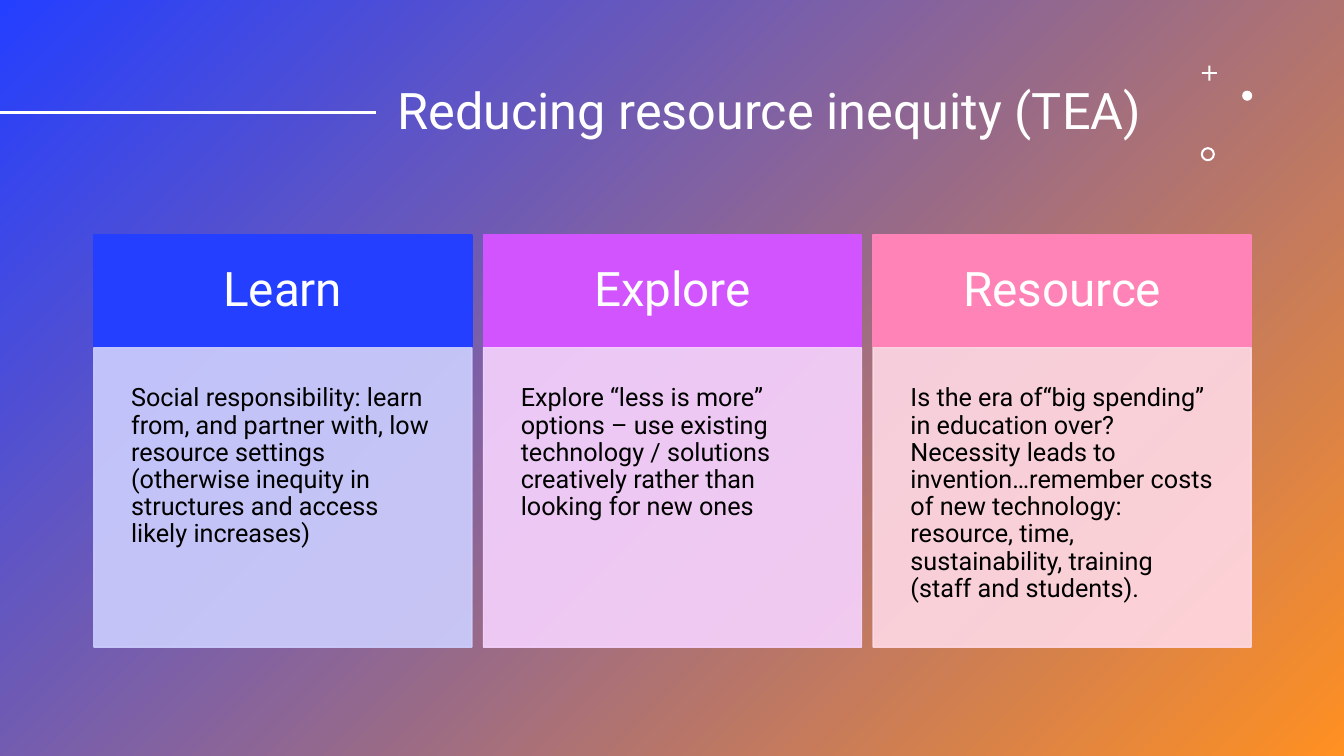
from pptx import Presentation, util as u
from pptx.dml.color import RGBColor
from pptx.enum import shapes, text
from pptx.oxml import ns, xmlchemy as xml

# Content
TITLE = "Reducing resource inequity (TEA)"
CARDS = [
    ("Learn", "blue", "pale blue",
     "Social responsibility: learn from, and partner with, low resource settings "
     "(otherwise inequity in structures and access likely increases)"),
    ("Explore", "violet", "pale violet",
     "Explore “less is more” options – use existing technology / solutions "
     "creatively rather than looking for new ones"),
    ("Resource", "pink", "pale pink",
     "Is the era of“big spending” in education over? Necessity leads to "
     "invention…remember costs of new technology: resource, time, "
     "sustainability, training (staff and students)."),
]
HEX = {
    "blue": "243FFF", "violet": "D154FF", "pink": "FF83B6",
    "pale blue": "CDCFFF", "pale violet": "F7D3FF", "pale pink": "FFD9E6",
    "orange": "FF9022", "white": "FFFFFF", "black": "000000",
}
FONT = "Roboto"
KIND = shapes.MSO_SHAPE
# Ornaments: shape, left, top, size, adjustment
MARKS = [
    (KIND.CROSS, 11.92, 0.65, 0.15, 0.44),
    (KIND.OVAL, 12.32, 0.9, 0.1, None),
    (KIND.DONUT, 11.91, 1.46, 0.14, 0.15),
]

# Grid
WIDE, HIGH = 13.33, 7.5
LEFT, TOP = 0.93, 2.33
CARD_W, GAP = 3.75, 0.115
HEAD_H, BODY_H = 1.12, 2.97
RULE_Y = 1.12


def color(name):
    return RGBColor.from_string(HEX[name])


def place(kind, left, top, width, height):
    shape = slide.shapes.add_shape(kind, *map(u.Inches, (left, top, width, height)))
    shape.shadow.inherit = False
    shape.line.fill.background()
    return shape


def paint(shape, name):
    shape.fill.solid()
    shape.fill.fore_color.rgb = color(name)


def write(shape, words, size, name, align, anchor, inset):
    frame = shape.text_frame
    frame.text = words
    frame.word_wrap = True
    frame.auto_size = text.MSO_AUTO_SIZE.NONE
    frame.vertical_anchor = anchor
    frame.margin_left = frame.margin_right = u.Inches(inset)
    frame.margin_top = frame.margin_bottom = u.Inches(inset)
    para = frame.paragraphs[0]
    para.alignment = align
    para.line_spacing = 0.9
    para.space_before = u.Pt(0)
    font = para.runs[0].font
    font.name, font.size = FONT, u.Pt(size)
    font.color.rgb = color(name)


def panel(left, top, height, name, alpha=None):
    shape = place(KIND.RECTANGLE, left, top, CARD_W, height)
    paint(shape, name)
    shape.line.color.rgb = color(name)
    shape.line.width = u.Pt(1)
    if alpha:
        for tint in shape.element.iter(ns.qn("a:srgbClr")):
            item = xml.OxmlElement("a:alpha")
            item.set("val", str(alpha * 1000))
            tint.append(item)
    return shape


deck = Presentation()
deck.slide_width, deck.slide_height = u.Inches(WIDE), u.Inches(HIGH)
slide = deck.slides.add_slide(deck.slide_layouts[5])

# Gradient backdrop, sent behind the title
back = place(KIND.RECTANGLE, 0, 0, WIDE, HIGH)
back.fill.gradient()
back.fill.gradient_angle = 315
for stop, name in zip(back.fill.gradient_stops, ("blue", "orange")):
    stop.color.rgb = color(name)
slide.shapes.element.insert(2, back.element)

# Title and the rule that leads to it
title = slide.shapes.title
title.left, title.top, title.width, title.height = map(u.Inches, (3.84, 0.4, 8.58, 1.45))
write(title, TITLE, 36, "white", text.PP_ALIGN.LEFT, text.MSO_ANCHOR.MIDDLE, 0.1)
rule = slide.shapes.add_connector(
    shapes.MSO_CONNECTOR.STRAIGHT, 0, u.Inches(RULE_Y), u.Inches(3.73), u.Inches(RULE_Y))
rule.line.color.rgb = color("white")
rule.line.width = u.Pt(2)
rule.element.spPr.append(xml.OxmlElement("a:effectLst"))

# Ornaments
for kind, left, top, size, adjust in MARKS:
    mark = place(kind, left, top, size, size)
    paint(mark, "white")
    if adjust:
        mark.adjustments[0] = adjust

# Cards
for col, (name, strong, pale, body) in enumerate(CARDS):
    left = LEFT + col * (CARD_W + GAP)
    head = panel(left, TOP, HEAD_H, strong)
    write(head, name, 34, "white", text.PP_ALIGN.CENTER, text.MSO_ANCHOR.MIDDLE, 0.3)
    base = panel(left, TOP + HEAD_H, BODY_H, pale, 90)
    write(base, body, 18, "black", text.PP_ALIGN.LEFT, text.MSO_ANCHOR.TOP, 0.37)

deck.save("out.pptx")
